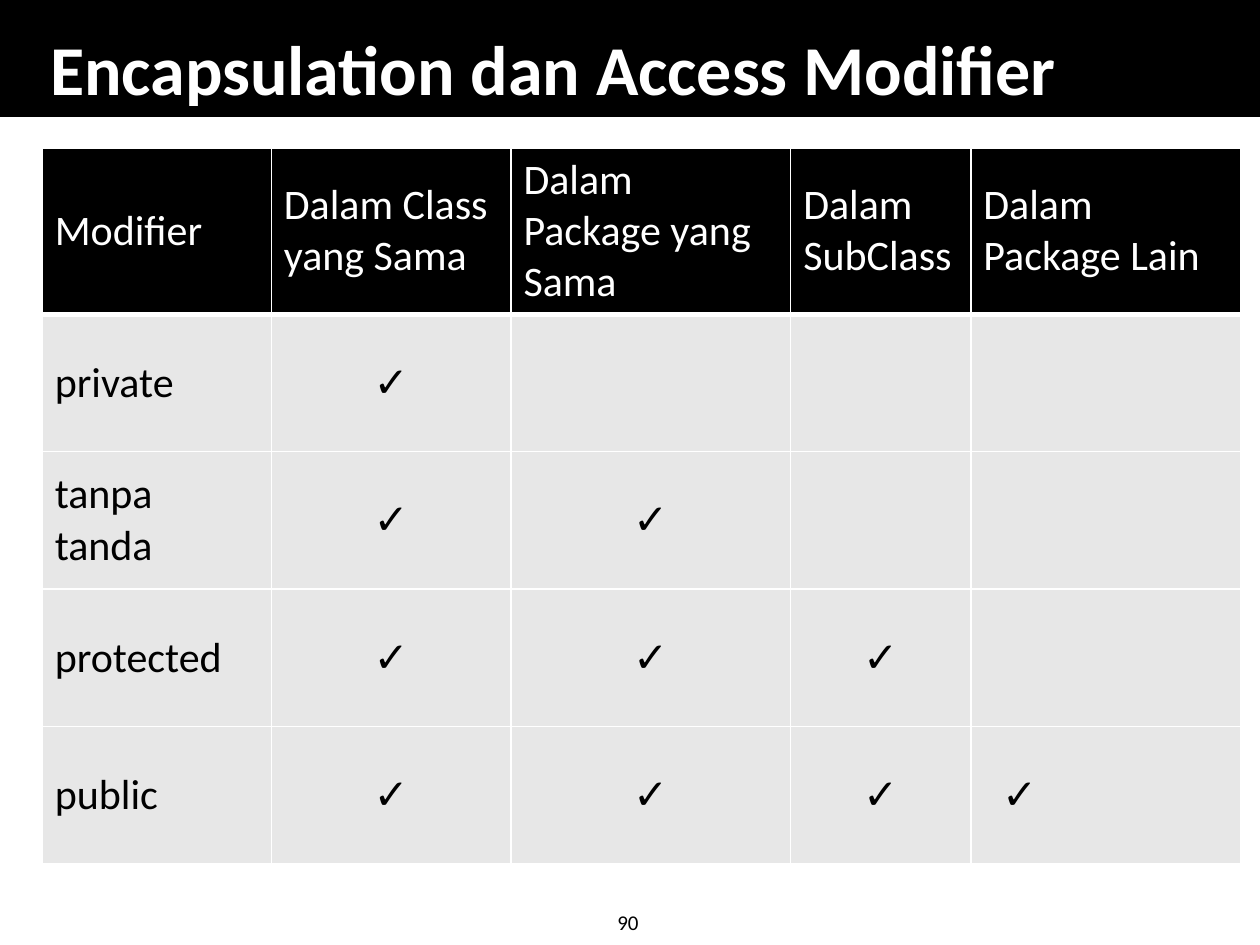
from lxml.etree import SubElement
from pptx import Presentation
from pptx.dml.color import RGBColor
from pptx.enum.shapes import MSO_SHAPE
from pptx.enum.text import MSO_ANCHOR as Anchor, MSO_AUTO_SIZE as AutoSize, PP_ALIGN as Align
from pptx.oxml.ns import qn
from pptx.util import Cm, Pt

FONT = "Calibri"
BLACK, WHITE, GREY = "000000", "FFFFFF", "E7E7E7"
CHECK = "✓"

COLUMN_WIDTHS = (4.62, 4.83, 5.64, 3.63, 5.44)
HEADER_HEIGHT, ROW_HEIGHT = 3.35, 2.77
HEADINGS = ("Modifier", "Dalam Class yang Sama", "Dalam Package yang Sama",
            "Dalam SubClass", "Dalam Package Lain")
# Each modifier is visible in one more scope than the one before it
MODIFIERS = ("private", "tanpa tanda", "protected", "public")


def color(hex_code):
    return RGBColor.from_string(hex_code)


def write(paragraph, text, size, hex_code, bold=False, align=Align.LEFT):
    paragraph.alignment = align
    run = paragraph.add_run()
    run.text = text
    run.font.name = FONT
    run.font.size = Pt(size)
    run.font.bold = bold
    run.font.color.rgb = color(hex_code)


def add_title_bar(slide, width):
    bar = slide.shapes.add_shape(MSO_SHAPE.RECTANGLE, 0, 0, width, Cm(2.34))
    bar.shadow.inherit = False
    bar.fill.solid()
    bar.fill.fore_color.rgb = color(BLACK)
    bar.line.color.rgb = color(BLACK)
    bar.line.width = Pt(1)
    # Send the bar behind the title
    slide.shapes._spTree.insert(2, bar._element)


def set_title(slide, text):
    title = slide.shapes.title
    title.left, title.top = Cm(0.76), Cm(0.53)
    title.width, title.height = Cm(23.77), Cm(1.8)
    frame = title.text_frame
    frame.auto_size = AutoSize.NONE
    frame.vertical_anchor = Anchor.BOTTOM
    write(frame.paragraphs[0], text, 40, WHITE, bold=True)


def add_page_number(slide, number):
    box = slide.shapes.add_textbox(Cm(12.14), Cm(18.21), Cm(1.04), Cm(0.76))
    box.text_frame.word_wrap = False
    write(box.text_frame.paragraphs[0], number, 12, BLACK, align=Align.CENTER)


def set_borders(cell, bottom_width):
    properties = cell._tc.get_or_add_tcPr()
    widths = {"a:lnL": 1, "a:lnR": 1, "a:lnT": 1, "a:lnB": bottom_width}
    for side, width in widths.items():
        line = SubElement(properties, qn(side), w=str(Pt(width)))
        SubElement(SubElement(line, qn("a:solidFill")), qn("a:srgbClr"), val=WHITE)


def format_cell(cell, background, bottom_width=1):
    set_borders(cell, bottom_width)
    cell.fill.solid()
    cell.fill.fore_color.rgb = color(background)
    cell.vertical_anchor = Anchor.MIDDLE


def add_access_table(slide):
    table = slide.shapes.add_table(
        len(MODIFIERS) + 1, len(HEADINGS), Cm(0.85), Cm(2.98),
        Cm(sum(COLUMN_WIDTHS)), Cm(HEADER_HEIGHT + ROW_HEIGHT * len(MODIFIERS))).table
    for column, width in zip(table.columns, COLUMN_WIDTHS):
        column.width = Cm(width)
    for index, row in enumerate(table.rows):
        row.height = Cm(ROW_HEIGHT if index else HEADER_HEIGHT)

    # Header row
    for column, heading in enumerate(HEADINGS):
        cell = table.cell(0, column)
        format_cell(cell, BLACK, bottom_width=3)
        write(cell.text_frame.paragraphs[0], heading, 24, WHITE)

    # Modifier names and check marks
    last = len(HEADINGS) - 1
    for row, modifier in enumerate(MODIFIERS, start=1):
        for column in range(len(HEADINGS)):
            cell = table.cell(row, column)
            format_cell(cell, GREY)
            paragraph = cell.text_frame.paragraphs[0]
            if column == 0:
                write(paragraph, modifier, 24, BLACK)
            elif column == last and column <= row:
                cell.margin_left = Cm(0.63)
                write(paragraph, CHECK, 24, BLACK)
            elif column <= row:
                write(paragraph, CHECK, 24, BLACK, align=Align.CENTER)


def main():
    deck = Presentation()
    deck.slide_width, deck.slide_height = Cm(25.4), Cm(19.05)
    slide = deck.slides.add_slide(deck.slide_layouts[5])
    add_title_bar(slide, deck.slide_width)
    set_title(slide, "Encapsulation dan Access Modifier")
    add_access_table(slide)
    add_page_number(slide, "90")
    deck.save("out.pptx")


if __name__ == "__main__":
    main()
